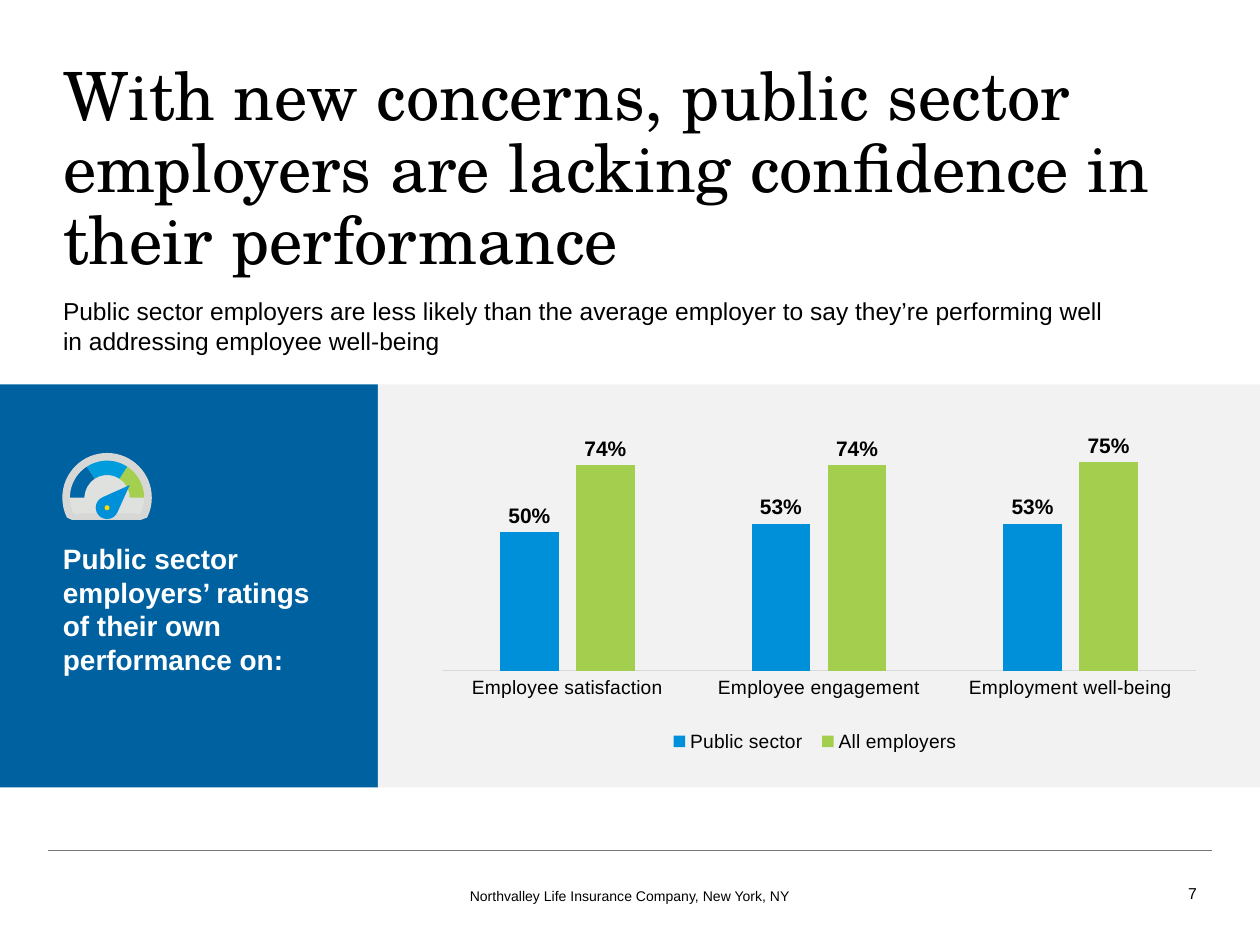
from math import acos, atan2, cos, degrees, hypot, radians, sin, tan

from lxml import etree
from pptx import Presentation
from pptx.chart.data import CategoryChartData
from pptx.dml.color import RGBColor
from pptx.enum.chart import XL_CHART_TYPE as ChartType, XL_LABEL_POSITION as LabelPosition
from pptx.enum.chart import XL_LEGEND_POSITION as LegendPosition, XL_TICK_MARK as TickMark
from pptx.enum.shapes import MSO_CONNECTOR as Connector, MSO_SHAPE as Shape
from pptx.enum.text import MSO_ANCHOR as Anchor, MSO_AUTO_SIZE as AutoSize, PP_ALIGN as Align
from pptx.oxml import parse_xml
from pptx.oxml.ns import nsdecls, qn
from pptx.util import Inches, Pt

COLORS = {
    "black": "000000", "white": "FFFFFF", "panel": "0061A0", "backdrop": "F2F2F2",
    "rule": "75787B", "axis": "D9D9D9", "public": "0090DA", "all": "A4CE4E",
    "rim": "D7D8D6", "face": "DFE1DF", "low": "0066A6", "middle": "009CDC",
    "high": "A5CF4F", "pivot": "FFDA02",
}
TITLE = "With new concerns, public sector employers are lacking confidence in their performance"
SUBTITLE = (
    "Public sector employers are less likely than the average employer to say they’re performing well\n"
    "in addressing employee well-being"
)
LABELS = [
    ((9.2, 6.96, 0.3, 0.25), "7", 9, {"align": Align.RIGHT, "anchor": Anchor.MIDDLE}),
    ((3.56, 6.99, 2.88, 0.24), "Northvalley Life Insurance Company, New York, NY", 8,
     {"align": Align.CENTER, "anchor": Anchor.MIDDLE, "wrap": False}),
    ((0.5, 4.3, 2.1, 1.08), "Public sector employers’ ratings of their own performance on:", 16,
     {"name": "white", "bold": True}),
]
CATEGORIES = ["Employee satisfaction", "Employee engagement", "Employment well-being"]
SERIES = [
    ("Public sector", [0.5, 0.53, 0.53], "public"),
    ("All employers", [0.74, 0.74, 0.75], "all"),
]
BAND_TOP, BAND_HEIGHT = 3.05, 3.2
PANELS = [(0, 3, "panel"), (3, 7, "backdrop")]

GAUGE_CENTER = (0.85, 3.95)
RIM_RADIUS, FACE_RADIUS, HUB_RADIUS = 0.35, 0.3, 0.18
GAUGE_BANDS = [(180, 90 + 33, "low"), (90 - 33, 0, "high"), (90 + 33, 90 - 33, "middle")]
BODY_DIP = 26
RIM_BASE = [(1.12, 4.12), (0.57, 4.12)]
NEEDLE_TIP, NEEDLE_CENTER, NEEDLE_RADIUS = (1.03, 3.85), (0.85, 4.03), 0.09
PIVOT_RADIUS = 0.02


def color(name):
    return RGBColor.from_string(COLORS[name])


def apply(target, values):
    for name, value in values.items():
        setattr(target, name, value)


def set_font(font, size, name="black", face="Arial", bold=False):
    apply(font, {"size": Pt(size), "name": face, "bold": bold})
    font.color.rgb = color(name)


def place(shape, left, top, width, height):
    apply(shape, {"left": Inches(left), "top": Inches(top),
                  "width": Inches(width), "height": Inches(height)})


def write(shape, text, size, name="black", face="Arial", bold=False,
          align=Align.LEFT, anchor=Anchor.TOP, wrap=True, spacing=1.0):
    frame = shape.text_frame
    apply(frame, {"word_wrap": wrap, "auto_size": AutoSize.NONE, "vertical_anchor": anchor,
                  "margin_left": 0, "margin_right": 0, "margin_top": 0, "margin_bottom": 0})
    paragraph = frame.paragraphs[0]
    paragraph.text = text
    apply(paragraph, {"alignment": align, "line_spacing": spacing, "space_before": Pt(0)})
    for run in paragraph.runs:
        set_font(run.font, size, name, face, bold)
    return paragraph


def paint(shape, name):
    shape.shadow.inherit = False
    shape.fill.solid()
    shape.fill.fore_color.rgb = color(name)
    shape.line.fill.background()


def arc(center, radius, start, end):
    def point(angle, reach=0.0):
        x, y = cos(radians(angle)), sin(radians(angle))
        return center[0] + radius * (x - reach * y), center[1] - radius * (y + reach * x)

    low, high = sorted((start, end))
    quarters = [angle for angle in range(-90, 361, 90) if low < angle < high]
    stops = sorted([start, *quarters, end], reverse=start > end)
    steps = [[point(start)]]
    for first, last in zip(stops, stops[1:]):
        reach = 4 / 3 * tan(radians(last - first) / 4)
        steps.append([point(first, reach), point(last, -reach), point(last)])
    return steps


def add_outline(slide, contours, name):
    ends = [[(Inches(x), Inches(y)) for x, y in (step[-1] for step in steps)] for steps in contours]
    builder = slide.shapes.build_freeform(*ends[0][0])
    for index, corners in enumerate(ends):
        if index:
            builder.move_to(*corners[0])
        builder.add_line_segments(corners[1:], close=True)
    shape = builder.convert_to_shape()
    paint(shape, name)
    segments = [step for steps in contours for step in steps[1:]]
    for line, step in zip(list(shape._element.iter(qn("a:lnTo"))), segments):
        if len(step) == 3:
            line.tag = qn("a:cubicBezTo")
            line.clear()
            for x, y in step:
                etree.SubElement(line, qn("a:pt"), x=str(Inches(x) - shape.left),
                                 y=str(Inches(y) - shape.top))
    return shape


def add_gauge(slide):
    left, right = 180 + BODY_DIP, -BODY_DIP
    add_outline(slide, [arc(GAUGE_CENTER, FACE_RADIUS, left, right)], "face")
    for start, end, name in GAUGE_BANDS:
        outer = arc(GAUGE_CENTER, FACE_RADIUS, start, end)
        add_outline(slide, [outer + arc(GAUGE_CENTER, HUB_RADIUS, end, start)], name)
    outer = arc(GAUGE_CENTER, RIM_RADIUS, left, right) + [[corner] for corner in RIM_BASE]
    rim = add_outline(slide, [outer, arc(GAUGE_CENTER, FACE_RADIUS, right, left)], "rim")
    rim.line.color.rgb = color("rim")
    rim.line.width = Pt(0.75)
    across, up = NEEDLE_TIP[0] - NEEDLE_CENTER[0], NEEDLE_CENTER[1] - NEEDLE_TIP[1]
    heading = degrees(atan2(up, across))
    tangent = degrees(acos(NEEDLE_RADIUS / hypot(across, up)))
    tail = arc(NEEDLE_CENTER, NEEDLE_RADIUS, heading + tangent, heading + 360 - tangent)
    add_outline(slide, [[[NEEDLE_TIP]] + tail], "public")
    add_outline(slide, [arc(NEEDLE_CENTER, PIVOT_RADIUS, 0, 360)], "pivot")


def manual_layout(settings):
    items = "".join(f'<c:{tag} val="{value}"/>' for tag, value in settings.items())
    return parse_xml(
        f'<c:layout {nsdecls("c")}><c:manualLayout>{items}</c:manualLayout></c:layout>')


def add_ratings_chart(slide):
    data = CategoryChartData(number_format="0%")
    data.categories = CATEGORIES
    for name, values, _ in SERIES:
        data.add_series(name, values)
    chart = slide.shapes.add_chart(ChartType.COLUMN_CLUSTERED, Inches(3.5), Inches(3.12),
                                   Inches(6), Inches(2.94), data).chart
    apply(chart, {"has_title": False, "has_legend": True})
    set_font(chart.font, 10)
    apply(chart.legend, {"position": LegendPosition.BOTTOM, "include_in_layout": False})
    set_font(chart.legend.font, 11)
    apply(chart.value_axis, {"minimum_scale": 0, "maximum_scale": 1,
                             "has_major_gridlines": False, "visible": False})
    axis = chart.category_axis
    apply(axis, {"major_tick_mark": TickMark.NONE, "minor_tick_mark": TickMark.NONE})
    axis.format.line.color.rgb = color("axis")
    axis.format.line.width = Pt(0.75)
    set_font(axis.tick_labels.font, 11)
    plot = chart.plots[0]
    apply(plot, {"gap_width": 200, "overlap": -30, "vary_by_categories": False})
    for series, (_, _, name) in zip(plot.series, SERIES):
        series.format.fill.solid()
        series.format.fill.fore_color.rgb = color(name)
        labels = series.data_labels
        apply(labels, {"show_value": True, "number_format": "0%",
                       "number_format_is_linked": False, "position": LabelPosition.OUTSIDE_END})
        set_font(labels.font, 12, bold=True)

    edges = {"xMode": "edge", "yMode": "edge"}
    plot_area, legend = chart._chartSpace.chart.plotArea, chart.legend._element
    for parent in (plot_area, legend):
        for layout in parent.findall(qn("c:layout")):
            parent.remove(layout)
    plot_area.insert(0, manual_layout(
        {"layoutTarget": "inner", **edges, "x": 0, "y": 0, "w": 1, "h": 0.75}))
    legend.find(qn("c:legendPos")).addnext(manual_layout(
        {**edges, "x": 0.29, "y": 0.89, "w": 0.41, "h": 0.1}))
    chart._chartSpace.chart.addnext(parse_xml(
        f'<c:spPr {nsdecls("c", "a")}><a:noFill/><a:ln><a:noFill/></a:ln></c:spPr>'))


def main():
    presentation = Presentation()
    apply(presentation, {"slide_width": Inches(10), "slide_height": Inches(7.5)})
    slide = presentation.slides.add_slide(presentation.slide_layouts[1])
    shapes = slide.shapes

    rule = shapes.add_connector(Connector.STRAIGHT, Inches(0.38), Inches(6.75),
                                Inches(9.62), Inches(6.75))
    rule.line.color.rgb = color("rule")
    rule.line.width = Pt(0.75)
    etree.SubElement(rule._element.spPr, qn("a:effectLst"))

    place(shapes.title, 0.5, 0.5, 9, 1.01)
    write(shapes.title, TITLE, 38, face="TeX Gyre Schola", spacing=0.9)
    body = slide.placeholders[1]
    place(body, 0.5, 2.35, 9, 0.43)
    properties = write(body, SUBTITLE, 14)._p.get_or_add_pPr()
    for name in ("marL", "indent"):
        properties.set(name, "0")
    etree.SubElement(properties, qn("a:buNone"))

    for left, width, name in PANELS:
        paint(shapes.add_shape(Shape.RECTANGLE, Inches(left), Inches(BAND_TOP),
                               Inches(width), Inches(BAND_HEIGHT)), name)
    add_ratings_chart(slide)
    for box, text, size, style in LABELS:
        write(shapes.add_textbox(*map(Inches, box)), text, size, **style)
    add_gauge(slide)

    presentation.save("out.pptx")


if __name__ == "__main__":
    main()
